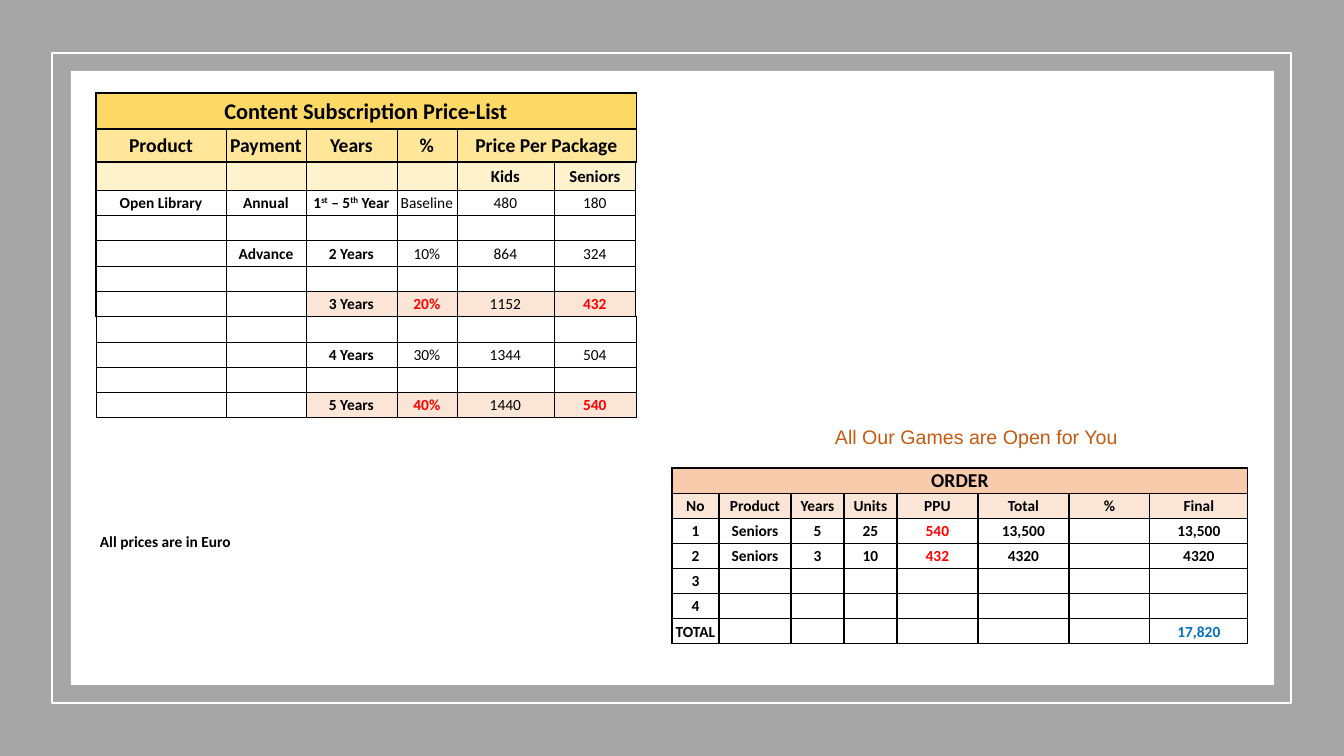
from pptx import Presentation
from pptx.dml.color import RGBColor
from pptx.enum.shapes import MSO_SHAPE as Preset
from pptx.enum.text import MSO_ANCHOR as Anchor, MSO_AUTO_SIZE as AutoSize, PP_ALIGN as Align
from pptx.oxml.ns import qn
from pptx.util import Emu, Pt
from lxml.etree import SubElement

BLACK = RGBColor(0x00, 0x00, 0x00)
WHITE = RGBColor(0xFF, 0xFF, 0xFF)
GREY = RGBColor(0xA6, 0xA6, 0xA6)
RED = RGBColor(0xFF, 0x00, 0x00)
BLUE = RGBColor(0x00, 0x70, 0xC0)
RUST = RGBColor(0xC5, 0x5A, 0x11)
GOLD = RGBColor(0xFF, 0xD9, 0x66)
YELLOW = RGBColor(0xFF, 0xE6, 0x99)
CREAM = RGBColor(0xFF, 0xF2, 0xCC)
PEACH = RGBColor(0xF8, 0xCB, 0xAD)
BLUSH = RGBColor(0xFB, 0xE5, 0xD6)

SLIDE = (1344, 756)
PANELS = [
    ((0, 0, 1344, 756), GREY, None),
    ((52, 53, 1239, 650), None, WHITE),
    ((71, 71, 1203, 614), WHITE, None),
]
CAPTIONS = [
    ((825, 420, 335, 34), "All Our Games are Open for You",
     dict(size=14, font="Arial", color=RUST)),
    ((90, 527, 244, 29), "All prices are in Euro", dict(bold=True)),
]

GAP = ("",) * 6
PRICES = [
    ("Content Subscription Price-List", "", "", "", "", ""),
    ("Product", "Payment", "Years", "%", "Price Per Package", ""),
    ("", "", "", "", "Kids", "Seniors"),
    ("Open Library", "Annual", "1^st^ – 5^th^ Year", "Baseline", "480", "180"),
    GAP,
    ("", "Advance", "2 Years", "10%", "864", "324"),
    GAP,
    ("", "", "3 Years", "20%", "1152", "432"),
    GAP,
    ("", "", "4 Years", "30%", "1344", "504"),
    GAP,
    ("", "", "5 Years", "40%", "1440", "540"),
]
PRICE_HEADS = [(GOLD, 16), (YELLOW, 14), (CREAM, 12)]
PRICE_HEAD_HEIGHTS = [36, 33, 28]
PRICE_BODY_HEIGHT = 228
PRICE_COLS = [130, 80, 91, 60, 97, 82]
PRICE_DEALS = ("3 Years", "5 Years")

ORDER = [
    ("ORDER", "", "", "", "", "", "", ""),
    ("No", "Product", "Years", "Units", "PPU", "Total", "%", "Final"),
    ("1", "Seniors", "5", "25", "540", "13,500", "", "13,500"),
    ("2", "Seniors", "3", "10", "432", "4320", "", "4320"),
    ("3", "", "", "", "", "", "", ""),
    ("4", "", "", "", "", "", "", ""),
    ("TOTAL", "", "", "", "", "", "", "17,820"),
]
ORDER_HEIGHT = 176
ORDER_COLS = [47, 72, 53, 53, 81, 91, 81, 98]


def px(length):
    return Emu(round(length * 914400 / 100.8))


def write(frame, text, size=11, font="Calibri", color=BLACK, bold=False, align=Align.LEFT):
    paragraph = frame.paragraphs[0]
    paragraph.alignment = align
    if not text:
        SubElement(paragraph._p, qn("a:endParaRPr"), sz=str(size * 100))
        return
    for index, piece in enumerate(text.split("^")):
        run = paragraph.add_run()
        run.text = piece
        run.font.size = Pt(size)
        run.font.name = font
        run.font.bold = bold
        run.font.color.rgb = color
        if index % 2:
            run._r.get_or_add_rPr().set("baseline", "30000")


def paint(fill, color):
    if color is None:
        fill.background()
    else:
        fill.solid()
        fill.fore_color.rgb = color


def draw_borders(cell, widths):
    properties = cell._tc.get_or_add_tcPr()
    for index, (side, width) in enumerate(zip("LRTB", widths)):
        line = SubElement(properties, qn("a:ln" + side), w=str(Pt(width)))
        color = SubElement(SubElement(line, qn("a:solidFill")), qn("a:srgbClr"))
        color.set("val", str(BLACK))
        properties.insert(index, line)


def add_grid(slide, left, top, rows, cols, heights, spans, style, borders):
    table = slide.shapes.add_table(len(rows), len(cols), px(left), px(top),
                                   px(sum(cols)), px(sum(heights))).table
    table.first_row = False
    table.horz_banding = False
    for column, width in zip(table.columns, cols):
        column.width = px(width)
    for row, height in zip(table.rows, heights):
        row.height = px(height)
    for r, first, last in spans:
        table.cell(r, first).merge(table.cell(r, last))
    for r, texts in enumerate(rows):
        for c, text in enumerate(texts):
            cell = table.cell(r, c)
            cell.margin_left = cell.margin_top = cell.margin_right = px(1)
            cell.margin_bottom = 0
            cell.vertical_anchor = Anchor.MIDDLE
            fill, text_format = style(r, c)
            write(cell.text_frame, text, align=Align.CENTER, **text_format)
            paint(cell.fill, fill)
            draw_borders(cell, borders(r, c))


def price_style(r, c):
    if r < len(PRICE_HEADS):
        fill, size = PRICE_HEADS[r]
        return fill, dict(size=size, bold=True)
    deal = PRICES[r][2] in PRICE_DEALS
    stressed = deal and c in (3, 5)
    return (BLUSH if deal and c >= 2 else None,
            dict(bold=c < 3 or stressed, color=RED if stressed else BLACK))


def price_borders(r, c):
    outer = 1 if r < 8 else 0.5
    return (outer if c == 0 else 0.25,
            outer if c == len(PRICE_COLS) - 1 else 0.25,
            1 if r < 3 else 0.5,
            1 if r < 2 else 0.5)


def order_style(r, c):
    fill = {0: PEACH, 1: BLUSH}.get(r)
    color = BLACK
    if r > 1 and c == 4:
        color = RED
    elif r == len(ORDER) - 1 and c == len(ORDER_COLS) - 1:
        color = BLUE
    return fill, dict(size=14 if r == 0 else 11, bold=True, color=color)


def order_borders(r, c):
    return (1, 1, 1, 1)


def main():
    deck = Presentation()
    deck.slide_width, deck.slide_height = map(px, SLIDE)
    slide = deck.slides.add_slide(deck.slide_layouts[6])

    for box, fill, line in PANELS:
        panel = slide.shapes.add_shape(Preset.RECTANGLE, *map(px, box))
        panel.shadow.inherit = False
        paint(panel.fill, fill)
        paint(panel.line.fill, line)
        if line is not None:
            panel.line.width = Pt(2)

    for box, text, text_format in CAPTIONS:
        frame = slide.shapes.add_textbox(*map(px, box)).text_frame
        frame.word_wrap = True
        frame.auto_size = AutoSize.SHAPE_TO_FIT_TEXT
        write(frame, text, **text_format)

    order_heights = [ORDER_HEIGHT / len(ORDER)] * len(ORDER)
    add_grid(slide, 672, 468, ORDER, ORDER_COLS, order_heights,
             [(0, 0, 7)], order_style, order_borders)

    body_count = len(PRICES) - len(PRICE_HEADS)
    price_heights = PRICE_HEAD_HEIGHTS + [PRICE_BODY_HEIGHT / body_count] * body_count
    add_grid(slide, 96, 93, PRICES, PRICE_COLS, price_heights,
             [(0, 0, 5), (1, 4, 5)], price_style, price_borders)

    deck.save("out.pptx")


if __name__ == "__main__":
    main()
